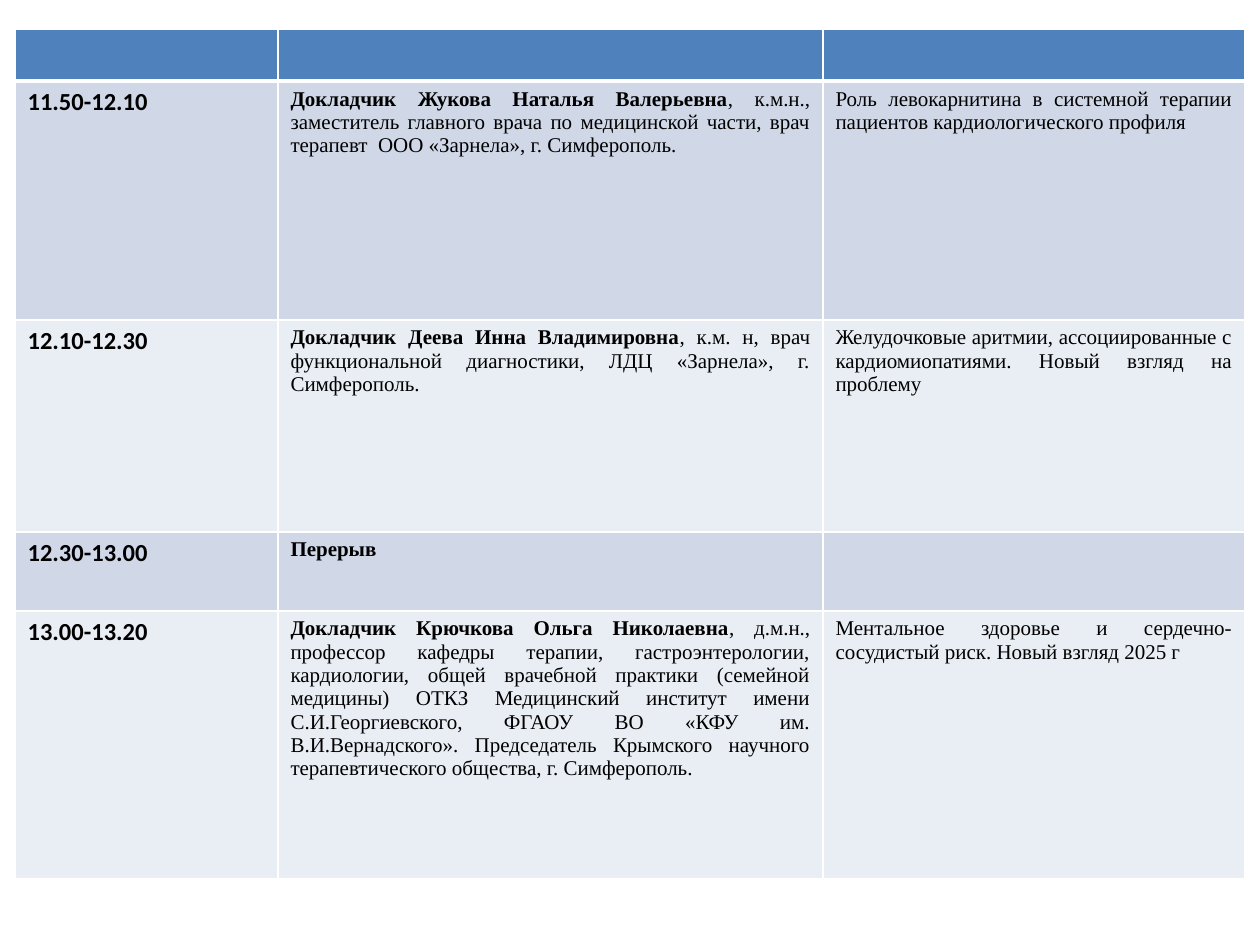
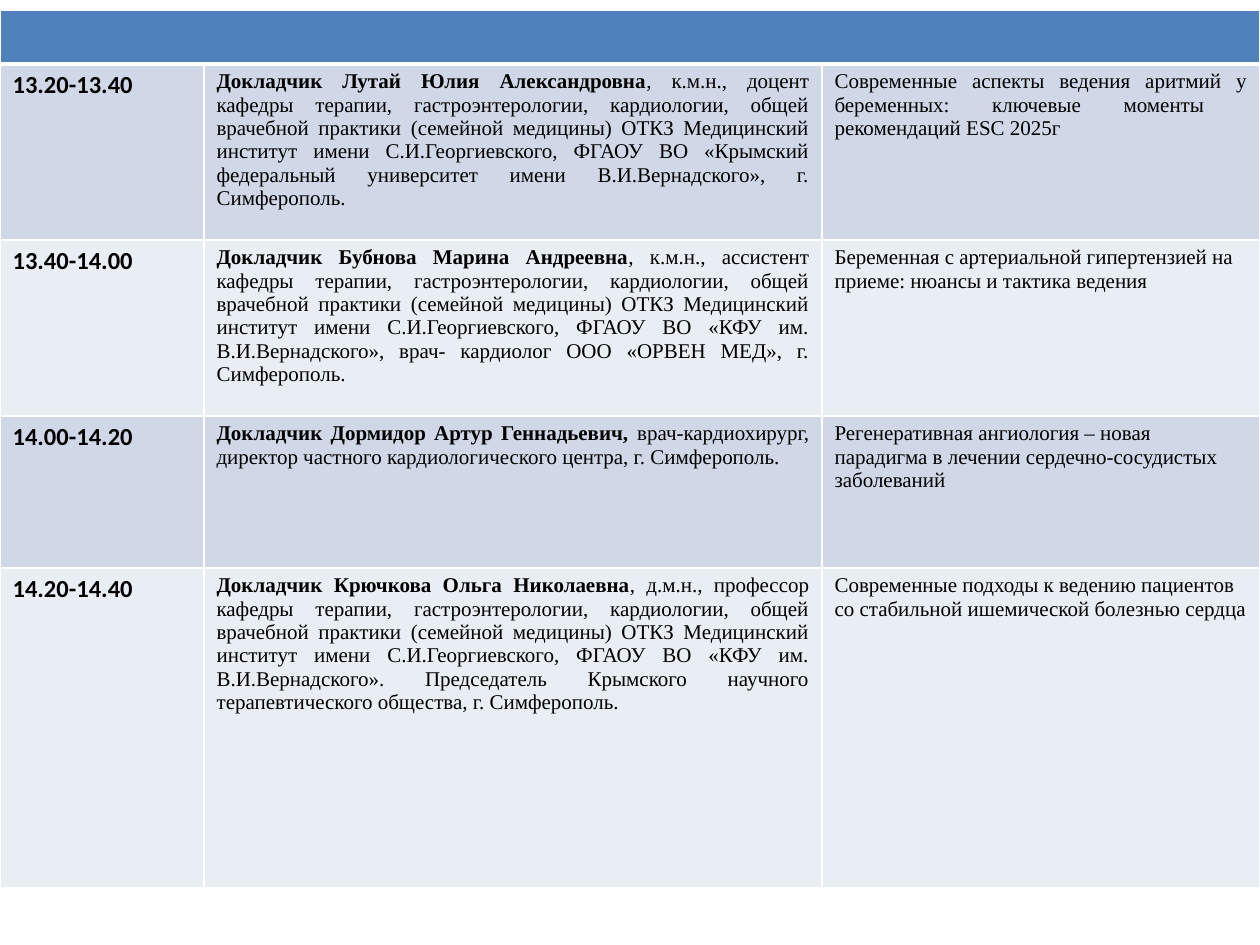
"""Builds two slides of a medical conference timetable."""
from lxml.etree import SubElement
from pptx import Presentation
from pptx.dml.color import RGBColor
from pptx.enum.text import PP_ALIGN
from pptx.oxml.ns import qn
from pptx.util import Emu, Pt

INSTITUTE = ("кафедры терапии, гастроэнтерологии, кардиологии, общей врачебной практики "
             "(семейной медицины) ОТКЗ Медицинский институт имени С.И.Георгиевского, ФГАОУ ВО")
CITY = "г. Симферополь."
KRYUCHKOVA = ("Докладчик Крючкова Ольга Николаевна",
              f", д.м.н., профессор {INSTITUTE} «КФУ им. В.И.Вернадского». "
              f"Председатель Крымского научного терапевтического общества, {CITY}")
JUSTIFY, LEFT = PP_ALIGN.JUSTIFY, PP_ALIGN.LEFT

TIMETABLES = [
    {
        "corner": (15, 29),
        "columns": (263, 545, 422),
        "header_height": 52,
        "merged_header": False,
        "sessions": [
            (239, "11.50-12.10", "Докладчик Жукова Наталья Валерьевна",
             ", к.м.н., заместитель главного врача по медицинской части, "
             f"врач терапевт  ООО «Зарнела», {CITY}",
             "Роль левокарнитина в системной терапии пациентов кардиологического профиля", JUSTIFY),
            (212, "12.10-12.30", "Докладчик Деева Инна Владимировна",
             f", к.м. н, врач функциональной диагностики, ЛДЦ «Зарнела», {CITY}",
             "Желудочковые аритмии, ассоциированные с кардиомиопатиями. "
             "Новый взгляд на проблему", JUSTIFY),
            (79, "12.30-13.00", "Перерыв", "", "", JUSTIFY),
            (268, "13.00-13.20", *KRYUCHKOVA,
             "Ментальное здоровье и сердечно-сосудистый риск. Новый взгляд 2025 г", JUSTIFY),
        ],
    },
    {
        "corner": (0, 10),
        "columns": (204, 618, 438),
        "header_height": 54,
        "merged_header": True,
        "sessions": [
            (176, "13.20-13.40", "Докладчик Лутай Юлия Александровна",
             f", к.м.н., доцент {INSTITUTE} «Крымский федеральный университет "
             f"имени В.И.Вернадского», {CITY}",
             "Современные аспекты ведения аритмий у беременных: "
             "ключевые моменты  рекомендаций ESC 2025г", JUSTIFY),
            (176, "13.40-14.00", "Докладчик Бубнова Марина Андреевна",
             f", к.м.н., ассистент {INSTITUTE} «КФУ им. В.И.Вернадского», "
             f"врач- кардиолог ООО «ОРВЕН МЕД», {CITY}",
             "Беременная с артериальной гипертензией на приеме: нюансы и тактика ведения", LEFT),
            (152, "14.00-14.20", "Докладчик Дормидор Артур Геннадьевич, ",
             f"врач-кардиохирург, директор частного кардиологического центра, {CITY}",
             "Регенеративная ангиология – новая парадигма в лечении "
             "сердечно-сосудистых заболеваний", LEFT),
            (320, "14.20-14.40", *KRYUCHKOVA,
             "Современные подходы к ведению пациентов со стабильной "
             "ишемической болезнью сердца", LEFT),
        ],
    },
]

HEADER, BANDS, GRID, INK = "4F81BD", ("D0D8E8", "E9EDF4"), "FFFFFF", "000000"
TIME = {"name": "Calibri", "size": Pt(14), "bold": True}
SPEAKER = {"name": "Times New Roman", "size": Pt(12), "bold": True}
BODY = {**SPEAKER, "bold": False}


def px(length):
    return Emu(round(length * 914400 / 126))


def color(value):
    return RGBColor.from_string(value)


def paint(cell, fill, top=1, bottom=1):
    properties = cell._tc.get_or_add_tcPr()
    for side, width in zip("LRTB", (1, 1, top, bottom)):
        border = SubElement(properties, qn(f"a:ln{side}"), w=str(Pt(width)))
        solid = SubElement(border, qn("a:solidFill"))
        SubElement(solid, qn("a:srgbClr"), val=GRID)
    cell.fill.solid()
    cell.fill.fore_color.rgb = color(fill)


def write(cell, alignment, *runs):
    paragraph = cell.text_frame.paragraphs[0]
    paragraph.alignment = alignment
    for text, style in runs:
        if text:
            run = paragraph.add_run()
            run.text = text
            run.font.color.rgb = color(INK)
            for attribute, value in style.items():
                setattr(run.font, attribute, value)


def add_timetable(slide, timetable):
    columns, sessions = timetable["columns"], timetable["sessions"]
    heights = [timetable["header_height"], *(session[0] for session in sessions)]
    box = (*timetable["corner"], sum(columns), sum(heights))
    table = slide.shapes.add_table(len(heights), len(columns), *map(px, box)).table
    for column, width in zip(table.columns, columns):
        column.width = px(width)
    for row, height in zip(table.rows, heights):
        row.height = px(height)

    for cell in table.rows[0].cells:
        paint(cell, HEADER, bottom=3)
    if timetable["merged_header"]:
        table.cell(0, 0).merge(table.cell(0, len(columns) - 1))

    for index, (_, time, speaker, post, topic, topic_alignment) in enumerate(sessions):
        cells = list(table.rows[index + 1].cells)
        for cell in cells:
            paint(cell, BANDS[index % 2], top=1 if index else 3)
        write(cells[0], LEFT, (time, TIME))
        write(cells[1], JUSTIFY, (speaker, SPEAKER), (post, BODY))
        write(cells[2], topic_alignment, (topic, BODY))


def main():
    deck = Presentation()
    deck.slide_width, deck.slide_height = px(1260), px(945)
    for timetable in TIMETABLES:
        add_timetable(deck.slides.add_slide(deck.slide_layouts[6]), timetable)
    deck.save("out.pptx")


if __name__ == "__main__":
    main()
